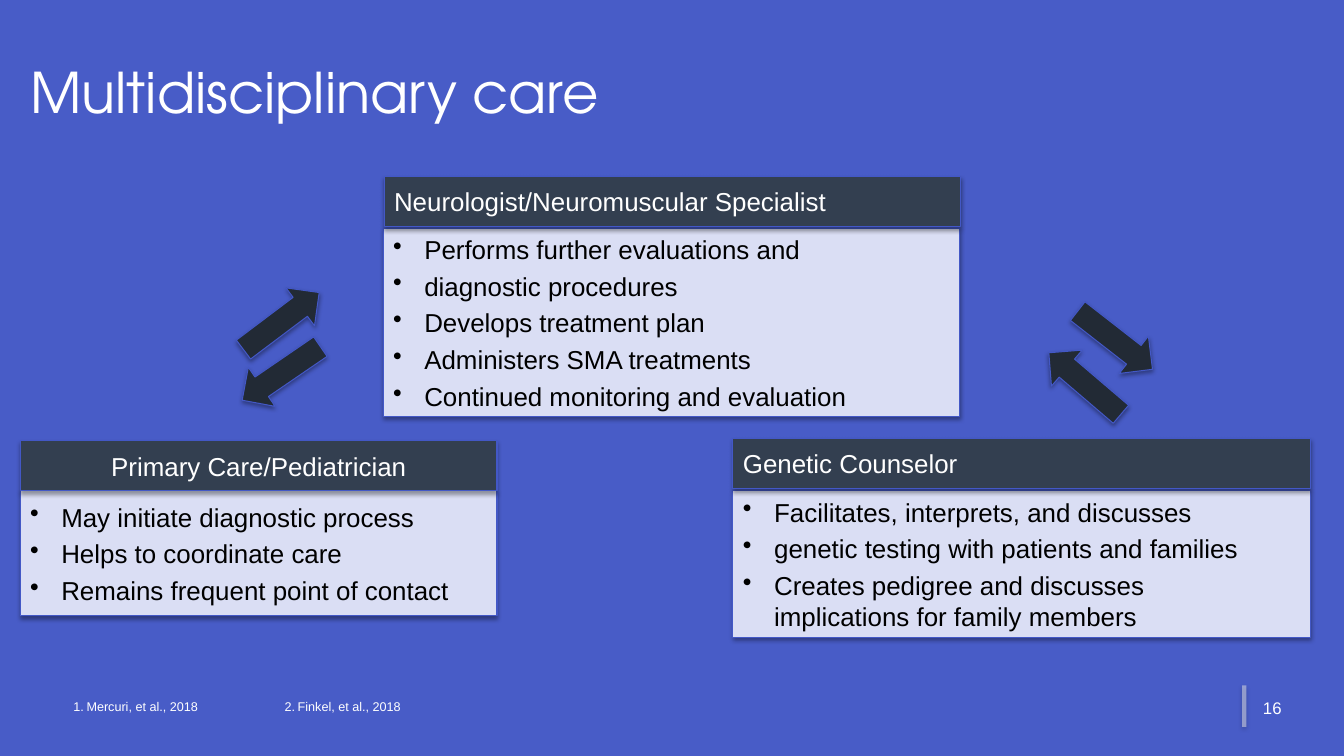
import pptx
import pptx.util
import pptx.dml.color
import pptx.enum.shapes
import pptx.enum.text
import pptx.oxml
import pptx.oxml.ns

PX = 9144  # 100 px to the inch
THEME = {
    "page": "485CC7", "edge": "4358C6", "header": "333F50", "panel": "DADEF4",
    "arrow": "222A35", "rule": "E7E6E6", "light": "FFFFFF", "dark": "000000",
    "title_font": "TeX Gyre Adventor", "body_font": "Arial",
    "title_size": 40, "body_size": 18.5, "number_size": 12, "note_size": 9,
}
NS = pptx.oxml.ns.nsdecls("a")
SHADOW = (f'<a:effectLst {NS}><a:outerShdw blurRad="39370" dist="22860" dir="5400000" '
          'rotWithShape="0"><a:srgbClr val="000000"><a:alpha val="35000"/></a:srgbClr>'
          '</a:outerShdw></a:effectLst>')
KINDS = pptx.enum.shapes.MSO_SHAPE
ALIGN = pptx.enum.text.PP_ALIGN
MIDDLE = pptx.enum.text.MSO_ANCHOR.MIDDLE


def write(box, lines, color, size, font="body_font", align=ALIGN.LEFT,
          bullet=None, indent=0, gap=0):
    frame = box.text_frame
    frame.word_wrap = True
    frame.text = lines[0]
    for line in lines[1:]:
        frame.add_paragraph().text = line
    for index, para in enumerate(frame.paragraphs):
        para.alignment = align
        if index and gap:
            para.space_before = pptx.util.Pt(gap)
        if bullet:
            props = para._p.get_or_add_pPr()
            props.set("marL", str(indent * PX))
            props.set("indent", str(-indent * PX))
            props.append(pptx.oxml.parse_xml(bullet))
        for span in para.runs:
            span.font.name = THEME[font]
            span.font.size = pptx.util.Pt(THEME[size])
            span.font.color.rgb = pptx.dml.color.RGBColor.from_string(THEME[color])


def add_block(kind, place, fill):
    block = page.shapes.add_shape(kind, *[n * PX for n in place])
    block.fill.solid()
    block.fill.fore_color.rgb = pptx.dml.color.RGBColor.from_string(THEME[fill])
    block.line.color.rgb = pptx.dml.color.RGBColor.from_string(THEME["edge"])
    block.line.width = pptx.util.Pt(0.75)
    block._element.spPr.append(pptx.oxml.parse_xml(SHADOW))
    block.text_frame.vertical_anchor = MIDDLE
    return block


deck = pptx.Presentation()
deck.slide_width, deck.slide_height = 1333 * PX, 750 * PX
page = deck.slides.add_slide(deck.slide_layouts[5])
page.background.fill.solid()
page.background.fill.fore_color.rgb = pptx.dml.color.RGBColor.from_string(THEME["page"])

# Title
title = page.shapes.title
title.left, title.top, title.width, title.height = [n * PX for n in (20, 18, 1225, 145)]
write(title, ["Multidisciplinary care"], "light", "title_size", "title_font")
title.text_frame.vertical_anchor = MIDDLE
title.text_frame.auto_size = pptx.enum.text.MSO_AUTO_SIZE.NONE

# Page number and its rule
rule = page.shapes.add_connector(pptx.enum.shapes.MSO_CONNECTOR.STRAIGHT,
                                 1234 * PX, 680 * PX, 1234 * PX, 721 * PX)
rule.line.width = pptx.util.Pt(3)
rule.line.color.rgb = pptx.dml.color.RGBColor.from_string(THEME["rule"])
rule_color = rule._element.spPr.find(".//" + pptx.oxml.ns.qn("a:srgbClr"))
rule_color.append(pptx.oxml.parse_xml(f'<a:alpha {NS} val="50000"/>'))
rule._element.spPr.append(pptx.oxml.parse_xml(SHADOW))
number = page.shapes.add_textbox(1234 * PX, 682 * PX, 47 * PX, 40 * PX)
write(number, ["16"], "light", "number_size", align=ALIGN.RIGHT)
number.text_frame.vertical_anchor = MIDDLE

# Care team cards: role, alignment, header place, panel place, duties
cards = [
    ("Primary Care/Pediatrician", ALIGN.CENTER, (20, 437, 473, 50), (20, 487, 473, 124),
     ["May initiate diagnostic process", "Helps to coordinate care",
      "Remains frequent point of contact"]),
    ("Neurologist/Neuromuscular Specialist", ALIGN.LEFT,
     (381, 175, 572, 50), (380, 227, 572, 186),
     ["Performs further evaluations and\ndiagnostic procedures", "Develops treatment plan",
      "Administers SMA treatments", "Continued monitoring and evaluation"]),
    ("Genetic Counselor", ALIGN.LEFT, (727, 435, 573, 50), (727, 487, 573, 145),
     ["Facilitates, interprets, and discusses\ngenetic testing with patients and families",
      "Creates pedigree and discusses\nimplications for family members"]),
]
DOT = f'<a:buChar {NS} char="•"/>'
for role, align, header_place, panel_place, duties in cards:
    panel = add_block(KINDS.RECTANGLE, panel_place, "panel")
    write(panel, duties, "dark", "body_size", bullet=DOT, indent=31, gap=4)
    header = add_block(KINDS.RECTANGLE, header_place, "header")
    write(header, [role], "light", "body_size", align=align)

# Arrows between the cards
for left, top, angle in [(232, 347, 325.6), (232, 295, 143),
                         (1029, 357, 40.5), (1059, 314, 217.9)]:
    add_block(KINDS.LEFT_ARROW, (left, top, 94, 47), "arrow").rotation = angle

# References, numbered in columns
notes = page.shapes.add_textbox(63 * PX, 688 * PX, 648 * PX, 25 * PX)
write(notes, ["Mercuri, et al., 2018", "Finkel, et al., 2018"], "light", "note_size",
      bullet=f'<a:buAutoNum {NS} type="arabicPeriod"/>', indent=13)
notes.text_frame.auto_size = pptx.enum.text.MSO_AUTO_SIZE.SHAPE_TO_FIT_TEXT
notes.text_frame._txBody.bodyPr.set("numCol", "3")

deck.save("out.pptx")
